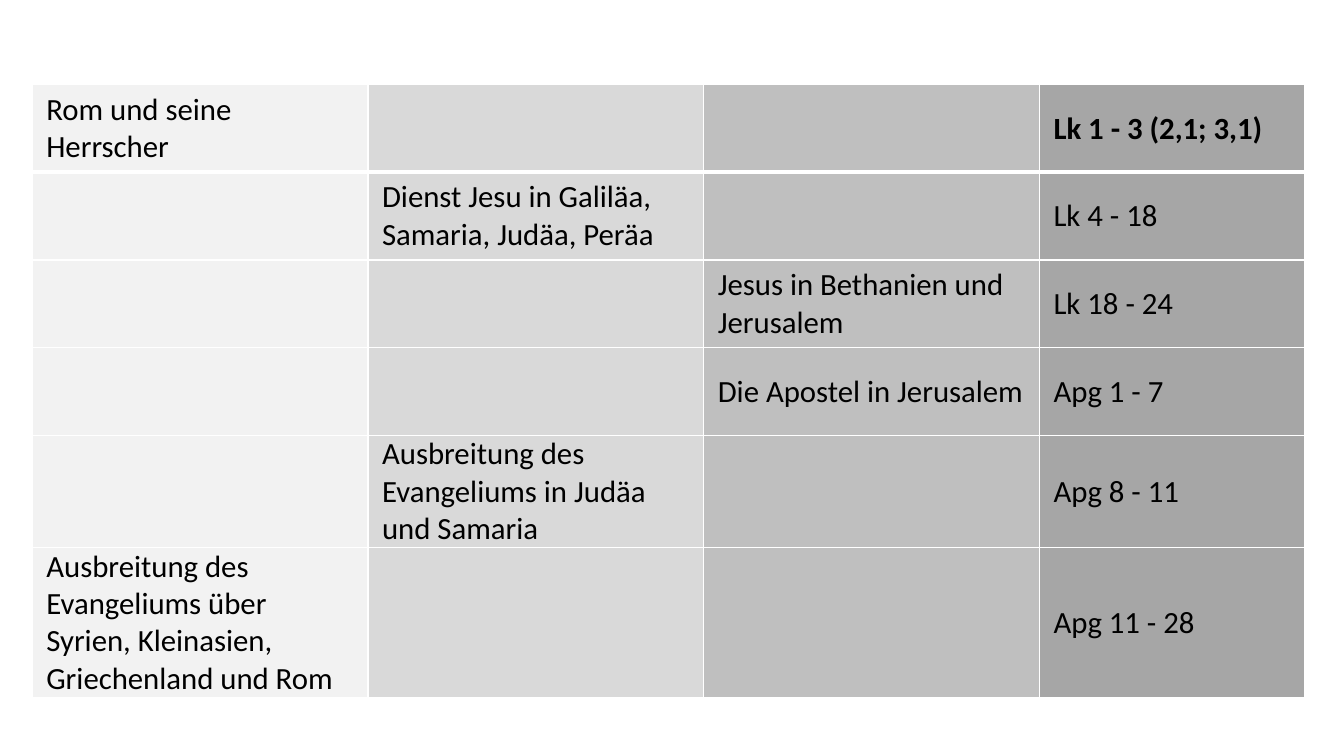
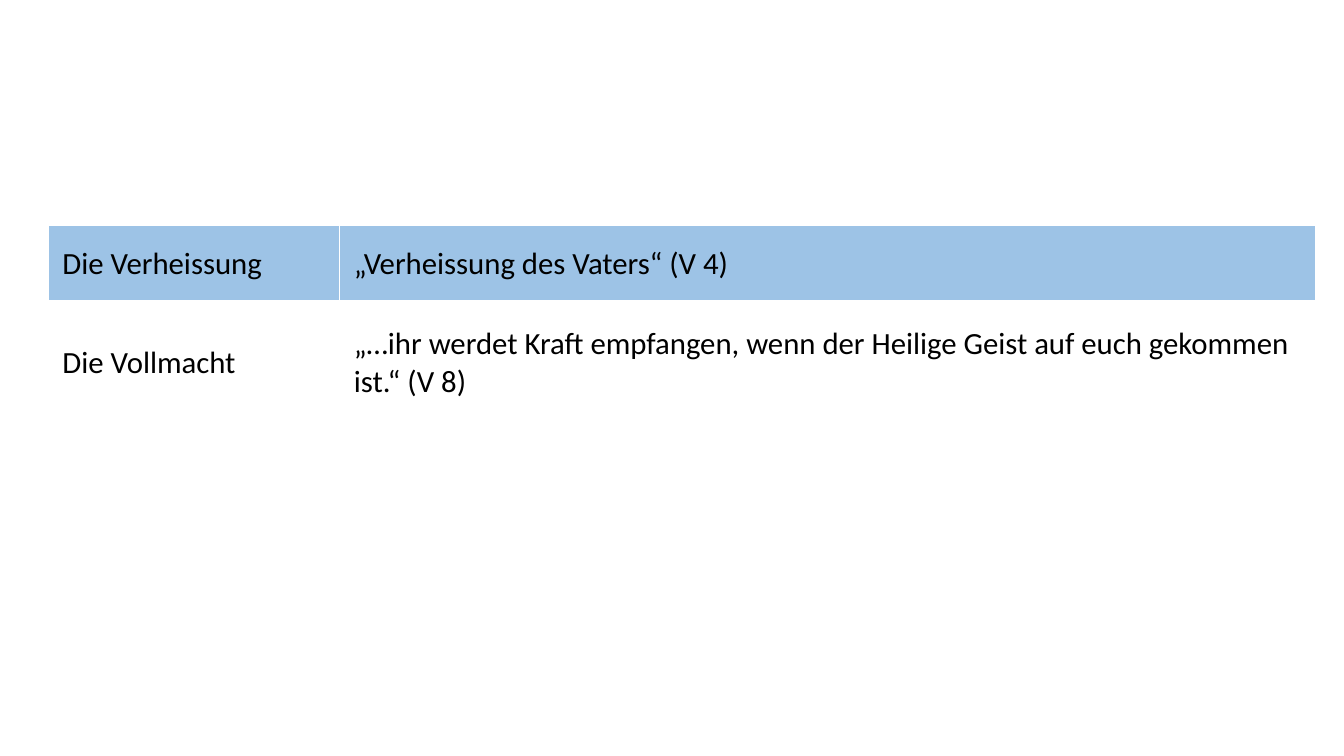
from lxml import etree
from pptx import Presentation, util as u
from pptx.dml.color import RGBColor
from pptx.enum import text
from pptx.oxml import ns

PX = 9144  # EMU per px, 100 px to the inch
HUES = {
    "ink": "000000", "rule": "FFFFFF", "plain": "FFFFFF", "blue": "9DC3E6",
    "pale": "F2F2F2", "light": "D9D9D9", "mid": "BFBFBF", "dark": "A6A6A6",
}


class Deck:
    font, size = "Calibri", 22
    inset = 14
    thin, thick = 1, 3

    def __init__(self, wide, high):
        self.prs = Presentation()
        self.prs.slide_width = u.Emu(wide * PX)
        self.prs.slide_height = u.Emu(high * PX)
        self.slide = None

    def page(self):
        blank = self.prs.slide_layouts[6]
        self.slide = self.prs.slides.add_slide(blank)

    def edge(self, cell, side, width):
        props = cell._tc.get_or_add_tcPr()
        line = etree.SubElement(props, ns.qn("a:ln" + side), w=str(u.Pt(width)))
        fill = etree.SubElement(line, ns.qn("a:solidFill"))
        etree.SubElement(fill, ns.qn("a:srgbClr"), val=HUES["rule"])

    def cell(self, cell, words, hue, top, base, bold):
        # Borders come before the fill in the cell's XML
        for side, width in zip("LRTB", (self.thin, self.thin, top, base)):
            self.edge(cell, side, width)
        cell.fill.solid()
        cell.fill.fore_color.rgb = RGBColor.from_string(HUES[hue])
        cell.margin_left = cell.margin_right = u.Emu(self.inset * PX)
        cell.margin_top = cell.margin_bottom = 0
        cell.vertical_anchor = text.MSO_ANCHOR.MIDDLE
        para = cell.text_frame.paragraphs[0]
        para.text = words
        font = para.font if not words else para.runs[0].font
        font.name, font.size, font.bold = self.font, u.Pt(self.size), bold
        font.color.rgb = RGBColor.from_string(HUES["ink"])

    def table(self, left, top, cols, rows, data, hue, strong=()):
        """Fill a table; hue(row, col) names a cell's colour."""
        box = (left, top, sum(cols), sum(rows))
        frame = self.slide.shapes.add_table(
            len(rows), len(cols), *(u.Emu(n * PX) for n in box))
        grid = frame.table
        grid.horz_banding = grid.first_row = False
        for col, width in zip(grid.columns, cols):
            col.width = u.Emu(width * PX)
        for row, height in zip(grid.rows, rows):
            row.height = u.Emu(height * PX)
        # A thick rule divides the first row from the second
        for r, line in enumerate(data):
            above = self.thick if r == 1 else self.thin
            below = self.thick if r == 0 else self.thin
            for c, words in enumerate(line):
                self.cell(grid.cell(r, c), words, hue(r, c), above, below,
                          (r, c) in strong)


def main():
    deck = Deck(1333, 750)

    # Outline of Luke and Acts: place of each topic, then its chapters
    topics = [
        (0, "Rom und seine Herrscher", "Lk 1 - 3 (2,1; 3,1)"),
        (1, "Dienst Jesu in Galiläa, Samaria, Judäa, Peräa", "Lk 4 - 18"),
        (2, "Jesus in Bethanien und Jerusalem", "Lk 18 - 24"),
        (2, "Die Apostel in Jerusalem", "Apg 1 - 7"),
        (1, "Ausbreitung des Evangeliums in Judäa und Samaria", "Apg 8 - 11"),
        (0, "Ausbreitung des Evangeliums über Syrien, Kleinasien, "
            "Griechenland und Rom", "Apg 11 - 28"),
    ]
    data = [[topic if c == place else "" for c in range(3)] + [verse]
            for place, topic, verse in topics]
    greys = ("pale", "light", "mid", "dark")
    deck.page()
    deck.table(32, 84, [333] * 3 + [263], [87] * 4 + [110, 146], data,
               lambda r, c: greys[c], strong={(0, 3)})

    # Promise and power
    data = [
        ("Die Verheissung", "„Verheissung des Vaters“ (V 4)"),
        ("Die Vollmacht", "„…ihr werdet Kraft empfangen, wenn der Heilige "
                          "Geist auf euch gekommen ist.“ (V 8)"),
    ]
    bands = ("blue", "plain")
    deck.page()
    deck.table(48, 224, [289, 968], [75, 122], data, lambda r, c: bands[r])

    deck.prs.save("out.pptx")


if __name__ == "__main__":
    main()
